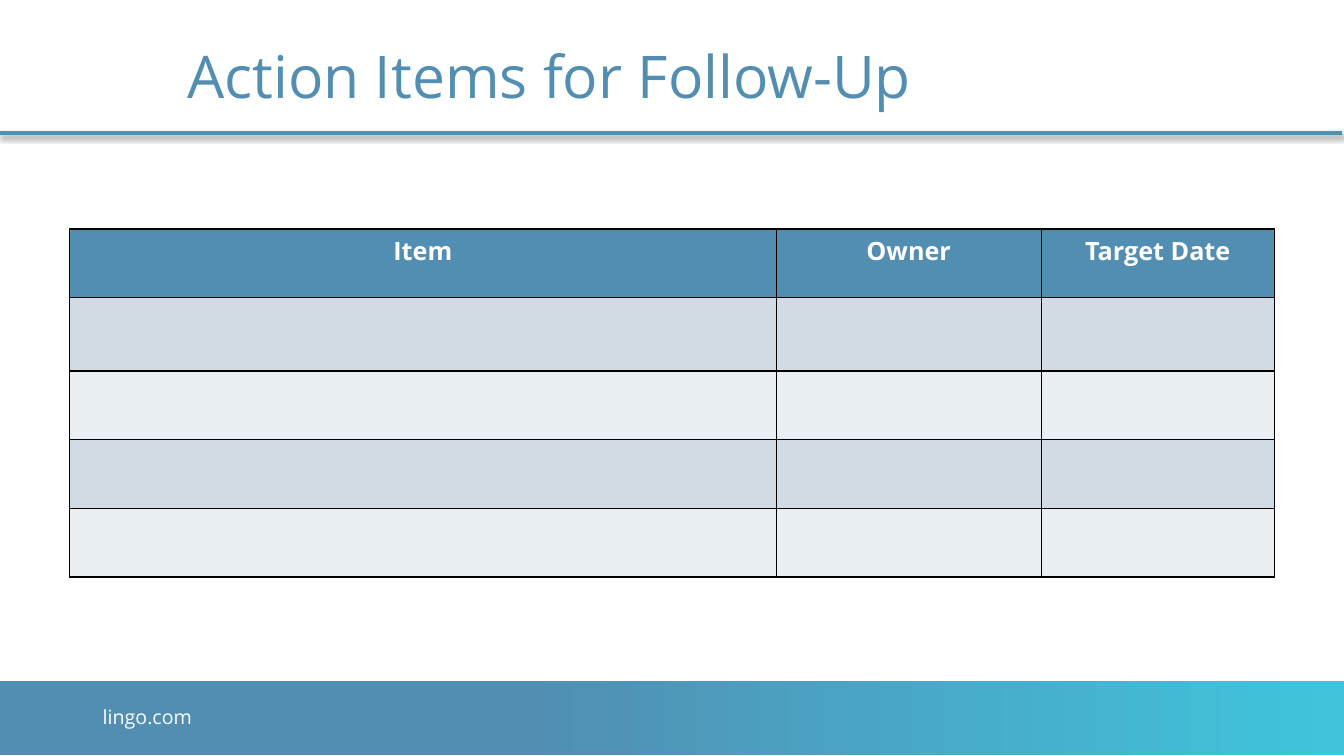
from lxml import etree
from pptx import Presentation
from pptx.dml.color import RGBColor
from pptx.enum.shapes import MSO_CONNECTOR as Connector, MSO_SHAPE as Shape
from pptx.enum.text import MSO_ANCHOR as Anchor, MSO_AUTO_SIZE as AutoSize, PP_ALIGN as Align
from pptx.oxml import parse_xml
from pptx.oxml.ns import nsdecls, qn
from pptx.util import Cm, Pt

COLORS = {
    "blue": "518EB2",
    "cyan": "40C4DD",
    "band_dark": "D0DBE4",
    "band_light": "E9EEF2",
    "white": "FFFFFF",
    "black": "000000",
}
WIDTH, HEIGHT = 33.87, 19.05


def rgb(name):
    return RGBColor.from_string(COLORS[name])


class SlideBuilder:
    font_name = "Open Sans"

    def __init__(self, slide):
        self.slide = slide

    def style(self, paragraph, size, color, bold=False):
        font = paragraph.font
        font.name, font.size, font.bold = self.font_name, Pt(size), bold
        font.color.rgb = rgb(color)

    def title(self, text, box):
        heading = self.slide.shapes.title
        heading.left, heading.top, heading.width, heading.height = map(Cm, box)
        frame = heading.text_frame
        frame.text = text
        frame.vertical_anchor = Anchor.MIDDLE
        frame.auto_size = AutoSize.NONE
        paragraph = frame.paragraphs[0]
        paragraph.alignment = Align.LEFT
        paragraph.line_spacing = 0.9
        self.style(paragraph, 42, "blue")

    def gradient_band(self, box, stops):
        band = self.slide.shapes.add_shape(Shape.RECTANGLE, *map(Cm, box))
        band.shadow.inherit = False
        band.line.fill.background()
        band.fill.gradient()
        band.fill.gradient_angle = 0
        for stop, (position, color) in zip(band.fill.gradient_stops, stops):
            stop.position = position
            stop.color.rgb = rgb(color)

    def shadowed_rule(self, left, right, y):
        rule = self.slide.shapes.add_connector(
            Connector.STRAIGHT, Cm(left), Cm(y), Cm(right), Cm(y))
        rule.line.color.rgb = rgb("blue")
        rule.line.width = Pt(2.25)
        rule._element.spPr.append(parse_xml(
            f'<a:effectLst {nsdecls("a")}>'
            f'<a:outerShdw blurRad="{Pt(4)}" dist="{Pt(3)}" dir="2700000" algn="tl" rotWithShape="0">'
            f'<a:srgbClr val="{COLORS["black"]}"><a:alpha val="40000"/></a:srgbClr>'
            '</a:outerShdw></a:effectLst>'))

    def text(self, text, box, size, color):
        frame = self.slide.shapes.add_textbox(*map(Cm, box)).text_frame
        frame.word_wrap = True
        frame.text = text
        self.style(frame.paragraphs[0], size, color)

    def cell_borders(self, cell):
        properties = cell._tc.get_or_add_tcPr()
        for index, side in enumerate(("lnL", "lnR", "lnT", "lnB")):
            border = etree.Element(qn(f"a:{side}"), w=str(Pt(1)))
            fill = etree.SubElement(border, qn("a:solidFill"))
            etree.SubElement(fill, qn("a:srgbClr"), val=COLORS["black"])
            properties.insert(index, border)

    def table(self, headers, left, top, widths, heights):
        table = self.slide.shapes.add_table(
            len(heights), len(widths), Cm(left), Cm(top),
            Cm(sum(widths)), Cm(sum(heights))).table
        for column, width in zip(table.columns, widths):
            column.width = Cm(width)
        for number, (row, height) in enumerate(zip(table.rows, heights)):
            row.height = Cm(height)
            band = "band_dark" if number % 2 else "band_light"
            for cell in row.cells:
                cell.fill.solid()
                cell.fill.fore_color.rgb = rgb(band if number else "blue")
                self.cell_borders(cell)
        for cell, header in zip(table.rows[0].cells, headers):
            cell.text = header
            paragraph = cell.text_frame.paragraphs[0]
            paragraph.alignment = Align.CENTER
            self.style(paragraph, 18, "white", bold=True)


def main():
    deck = Presentation()
    deck.slide_width, deck.slide_height = Cm(WIDTH), Cm(HEIGHT)
    builder = SlideBuilder(deck.slides.add_slide(deck.slide_layouts[5]))

    # Footer band and header rule
    builder.gradient_band((0, 17.15, WIDTH, 1.88), [(0.38, "blue"), (1, "cyan")])
    builder.shadowed_rule(-0.08, 33.81, 3.35)
    builder.text("lingo.com", (2.34, 17.65, 6.4, 1.02), 14, "white")

    # Title
    builder.title("Action Items for Follow-Up", (4.47, 0.79, 28.8, 2.44))

    # Action item table
    builder.table(
        ["Item", "Owner", "Target Date"], 1.75, 5.77,
        widths=[17.81, 6.68, 5.87],
        heights=[1.73, 1.85, 1.73, 1.73, 1.73])

    deck.save("out.pptx")


if __name__ == "__main__":
    main()
